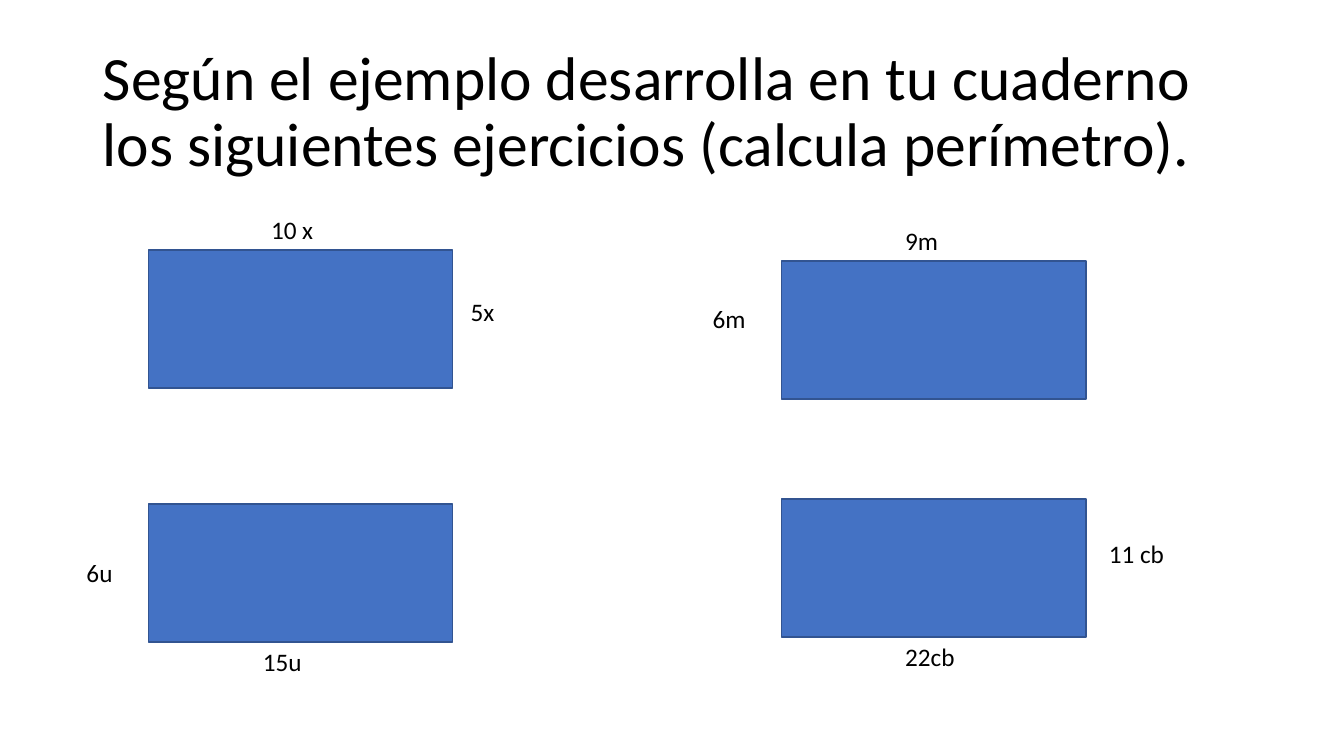
from dataclasses import dataclass

from pptx import Presentation
from pptx.dml.color import RGBColor
from pptx.enum.shapes import MSO_SHAPE
from pptx.enum.text import MSO_ANCHOR, MSO_AUTO_SIZE, PP_ALIGN
from pptx.util import Inches, Pt

RECT = MSO_SHAPE.RECTANGLE
LEFT = PP_ALIGN.LEFT
MIDDLE = MSO_ANCHOR.MIDDLE
NO_FIT = MSO_AUTO_SIZE.NONE
GROW = MSO_AUTO_SIZE.SHAPE_TO_FIT_TEXT
TITLE_ONLY = 5


@dataclass(frozen=True)
class Theme:
    face: str = "Calibri"
    ink: RGBColor = RGBColor(0, 0, 0)
    fill: RGBColor = RGBColor(0x44, 0x72, 0xC4)
    edge: RGBColor = RGBColor(0x32, 0x54, 0x91)
    title: Pt = Pt(44)
    label: Pt = Pt(18)


THEME = Theme()
TITLE = ("Según el ejemplo desarrolla en tu cuaderno "
         "los siguientes ejercicios (calcula perímetro).")
BOX = (3.02, 1.37)
TAG = (0.8, 0.4)
COLS = (1.47, 7.75)

# Each exercise: left and top of its rectangle, then (text, left, top) labels.
TASKS = (
    (COLS[0], 2.48, (("10 x", 2.59, 2.08), ("5x", 4.57, 2.89))),
    (COLS[0], 5, (("6u", 0.76, 5.48), ("15u", 2.51, 6.36))),
    (COLS[1], 2.59, (("6m", 6.97, 2.96), ("9m", 8.88, 2.19))),
    (COLS[1], 4.95, (("22cb", 8.88, 6.31), ("11 cb", 10.9, 5.29))),
)


def write(frame, text, size):
    frame.text = text
    frame.word_wrap = True
    para = frame.paragraphs[0]
    para.alignment = LEFT
    para.font.name = THEME.face
    para.font.size = size
    para.font.color.rgb = THEME.ink
    return para


def add_title(slide):
    title = slide.shapes.title
    title.left, title.top = Inches(0.92), Inches(0.4)
    title.width, title.height = Inches(11.5), Inches(1.45)
    frame = title.text_frame
    write(frame, TITLE, THEME.title).line_spacing = 0.9
    frame.auto_size = NO_FIT
    frame.vertical_anchor = MIDDLE


def add_box(slide, left, top):
    box = slide.shapes.add_shape(RECT, *map(Inches, (left, top, *BOX)))
    box.shadow.inherit = False
    box.fill.solid()
    box.fill.fore_color.rgb = THEME.fill
    box.line.color.rgb = THEME.edge
    box.line.width = Pt(1)


def add_label(slide, text, left, top):
    label = slide.shapes.add_textbox(*map(Inches, (left, top, *TAG)))
    write(label.text_frame, text, THEME.label)
    label.text_frame.auto_size = GROW


def main():
    deck = Presentation()
    deck.slide_width, deck.slide_height = Inches(13.33), Inches(7.5)
    slide = deck.slides.add_slide(deck.slide_layouts[TITLE_ONLY])
    add_title(slide)
    for left, top, labels in TASKS:
        add_box(slide, left, top)
        for label in labels:
            add_label(slide, *label)
    deck.save("out.pptx")


if __name__ == "__main__":
    main()
